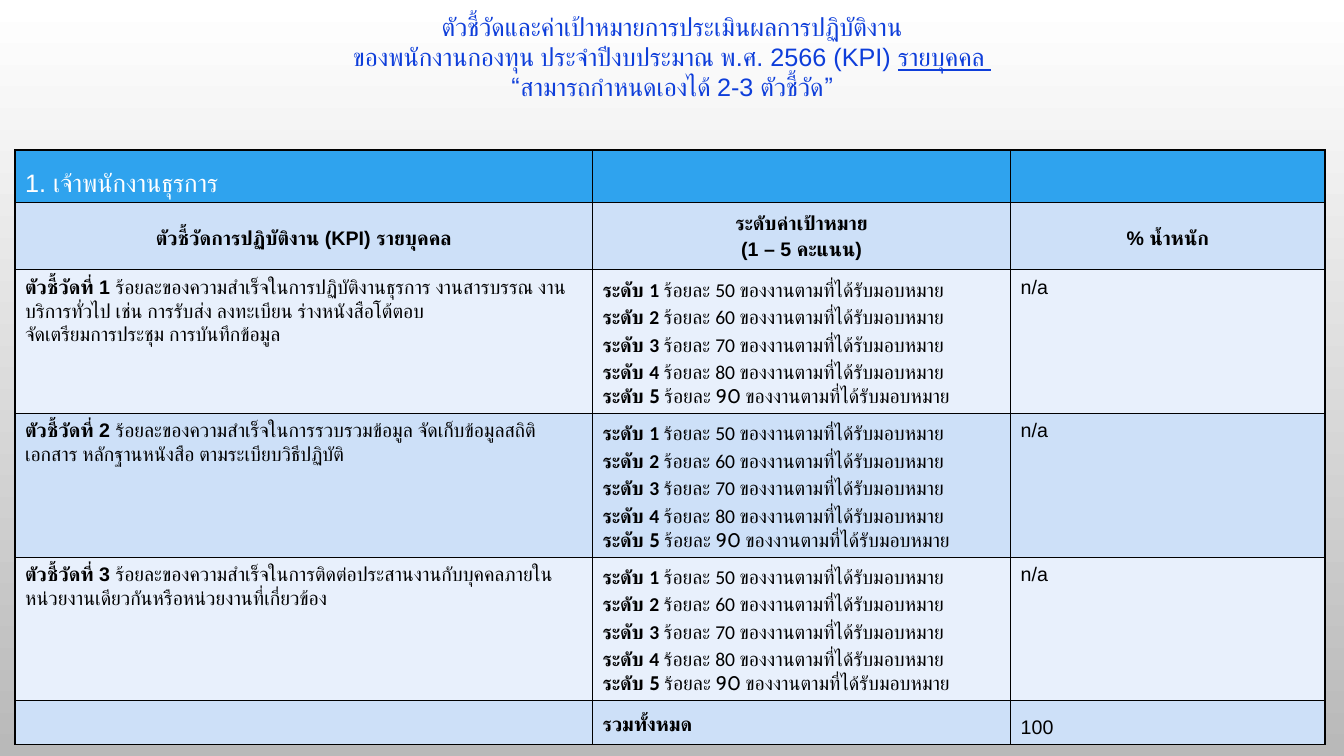
from dataclasses import dataclass

from lxml import etree
from pptx import Presentation
from pptx.dml.color import RGBColor
from pptx.enum.text import MSO_ANCHOR, MSO_AUTO_SIZE, PP_ALIGN
from pptx.oxml.ns import qn
from pptx.slide import Slide
from pptx.table import Table, _Cell
from pptx.text.text import TextFrame
from pptx.util import Cm, Pt

LEFT, CENTER = PP_ALIGN.LEFT, PP_ALIGN.CENTER
TOP, MIDDLE = MSO_ANCHOR.TOP, MSO_ANCHOR.MIDDLE
GROW = MSO_AUTO_SIZE.SHAPE_TO_FIT_TEXT


@dataclass(frozen=True)
class Theme:
    sky: str = "FFFFFF"
    ground: str = "B9B9B9"
    title: str = "0E3EDA"
    head: str = "2FA3EE"
    dark: str = "CDE0F8"
    light: str = "E8F0FC"
    ink: str = "000000"
    white: str = "FFFFFF"
    big: int = 18
    body: int = 14
    sans: str = "Arial"
    level: str = "Calibri"
    last: str = "Cabin"


@dataclass(frozen=True)
class Run:
    text: str
    bold: bool = False
    under: bool = False


@dataclass(frozen=True)
class Goal:
    name: str
    lines: tuple[str, ...]


THEME = Theme()
EXACT = Pt(16.8)
COLS = (14.55, 10.54, 7.92)
ROWS = (1.27, 1.7, 3.18, 3.18, 3.18, 1.09)
FILLS = (THEME.head, THEME.dark, THEME.light, THEME.dark, THEME.light, THEME.dark)
HEADS = (
    ("ตัวชี้วัดการปฏิบัติงาน (KPI) รายบุคคล",),
    ("ระดับค่าเป้าหมาย", "(1 – 5 คะแนน)"),
    ("% น้ำหนัก",),
)
GOALS = (
    Goal("ตัวชี้วัดที่ 1 ", (
        "ร้อยละของความสำเร็จในการปฏิบัติงานธุรการ งานสารบรรณ "
        "งานบริการทั่วไป เช่น การรับส่ง ลงทะเบียน ร่างหนังสือโต้ตอบ",
        "จัดเตรียมการประชุม การบันทึกข้อมูล",
    )),
    Goal("ตัวชี้วัดที่ 2 ", (
        "ร้อยละของความสำเร็จในการรวบรวมข้อมูล จัดเก็บข้อมูลสถิติ "
        "เอกสาร หลักฐานหนังสือ ตามระเบียบวิธีปฏิบัติ",
    )),
    Goal("ตัวชี้วัดที่ 3 ", (
        "ร้อยละของความสำเร็จในการติดต่อประสานงานกับบุคคลภายใน"
        "หน่วยงานเดียวกันหรือหน่วยงานที่เกี่ยวข้อง",
    )),
)


def write(frame: TextFrame, *runs: Run, size: int = THEME.body, color: str = THEME.ink,
          face: str = THEME.sans, align: PP_ALIGN = LEFT,
          space: float | Pt | None = None) -> None:
    para = frame.paragraphs[0]
    if para.runs:
        para = frame.add_paragraph()
    para.alignment = align
    if space:
        para.line_spacing = space
    for item in runs:
        for i, part in enumerate(item.text.split("\n")):
            if i:
                para.add_line_break()
            run = para.add_run()
            run.text = part
            font = run.font
            font.size, font.name = Pt(size), face
            font.bold, font.underline = item.bold, item.under
            font.color.rgb = RGBColor.from_string(color)


def style(cell: _Cell, fill: str) -> None:
    props = cell._tc.get_or_add_tcPr()
    for side in ("lnL", "lnR", "lnT", "lnB"):
        line = etree.SubElement(props, qn(f"a:{side}"), w=str(Pt(1)))
        solid = etree.SubElement(line, qn("a:solidFill"))
        etree.SubElement(solid, qn("a:srgbClr"), val=THEME.ink)
    cell.fill.solid()
    cell.fill.fore_color.rgb = RGBColor.from_string(fill)


def paint(slide: Slide) -> None:
    fill = slide.background.fill
    fill.gradient()
    fill.gradient_angle = 270
    for stop, color in zip(fill.gradient_stops, (THEME.sky, THEME.ground)):
        stop.color.rgb = RGBColor.from_string(color)


def add_title(slide: Slide) -> None:
    box = slide.shapes.add_textbox(Cm(0), Cm(0.15), Cm(33.87), Cm(3.84))
    frame = box.text_frame
    frame.word_wrap = True
    frame.auto_size = GROW
    look = dict(size=THEME.big, color=THEME.title, align=CENTER)
    write(frame,
          Run("ตัวชี้วัดและค่าเป้าหมายการประเมินผลการปฏิบัติงาน\n"
              "ของพนักงานกองทุน ประจำปีงบประมาณ พ.ศ. 2566 (KPI) "),
          Run("รายบุคคล ", under=True), **look)
    write(frame, Run("“สามารถกำหนดเองได้ 2-3 ตัวชี้วัด”"), **look)


def add_grid(slide: Slide) -> Table:
    table = slide.shapes.add_table(len(ROWS), len(COLS), Cm(0.38), Cm(3.78),
                                   Cm(sum(COLS)), Cm(sum(ROWS))).table
    for col, width in zip(table.columns, COLS):
        col.width = Cm(width)
    for i, (row, height) in enumerate(zip(table.rows, ROWS)):
        row.height = Cm(height)
        for cell in row.cells:
            style(cell, FILLS[i])
            cell.vertical_anchor = MIDDLE if i < 2 else TOP
    return table


def fill_goal(table: Table, row: int, goal: Goal) -> None:
    frame = table.cell(row, 0).text_frame
    write(frame, Run(goal.name, bold=True), Run(goal.lines[0]), space=EXACT)
    for line in goal.lines[1:]:
        write(frame, Run(line), space=EXACT)
    for level in range(1, 6):
        last = level == 5
        write(table.cell(row, 1).text_frame, Run(f"ระดับ {level} ", bold=True),
              Run(f"ร้อยละ {40 + 10 * level} ของงานตามที่ได้รับมอบหมาย"),
              face=THEME.last if last else THEME.level, space=None if last else 1.15)
    write(table.cell(row, 2).text_frame, Run("n/a"), space=EXACT)


def main() -> None:
    deck = Presentation()
    deck.slide_width, deck.slide_height = Cm(33.87), Cm(19.05)
    slide = deck.slides.add_slide(deck.slide_layouts[6])
    paint(slide)
    table = add_grid(slide)
    write(table.cell(0, 0).text_frame, Run("1. เจ้าพนักงานธุรการ"),
          size=THEME.big, color=THEME.white, space=1.5)
    for col, lines in enumerate(HEADS):
        for line in lines:
            write(table.cell(1, col).text_frame, Run(line, bold=True),
                  align=CENTER, space=1.2)
    for row, goal in enumerate(GOALS, 2):
        fill_goal(table, row, goal)
    write(table.cell(5, 1).text_frame, Run("รวมทั้งหมด", bold=True), space=1.5)
    write(table.cell(5, 2).text_frame, Run("100"), space=1.5)
    add_title(slide)
    deck.save("out.pptx")


if __name__ == "__main__":
    main()
